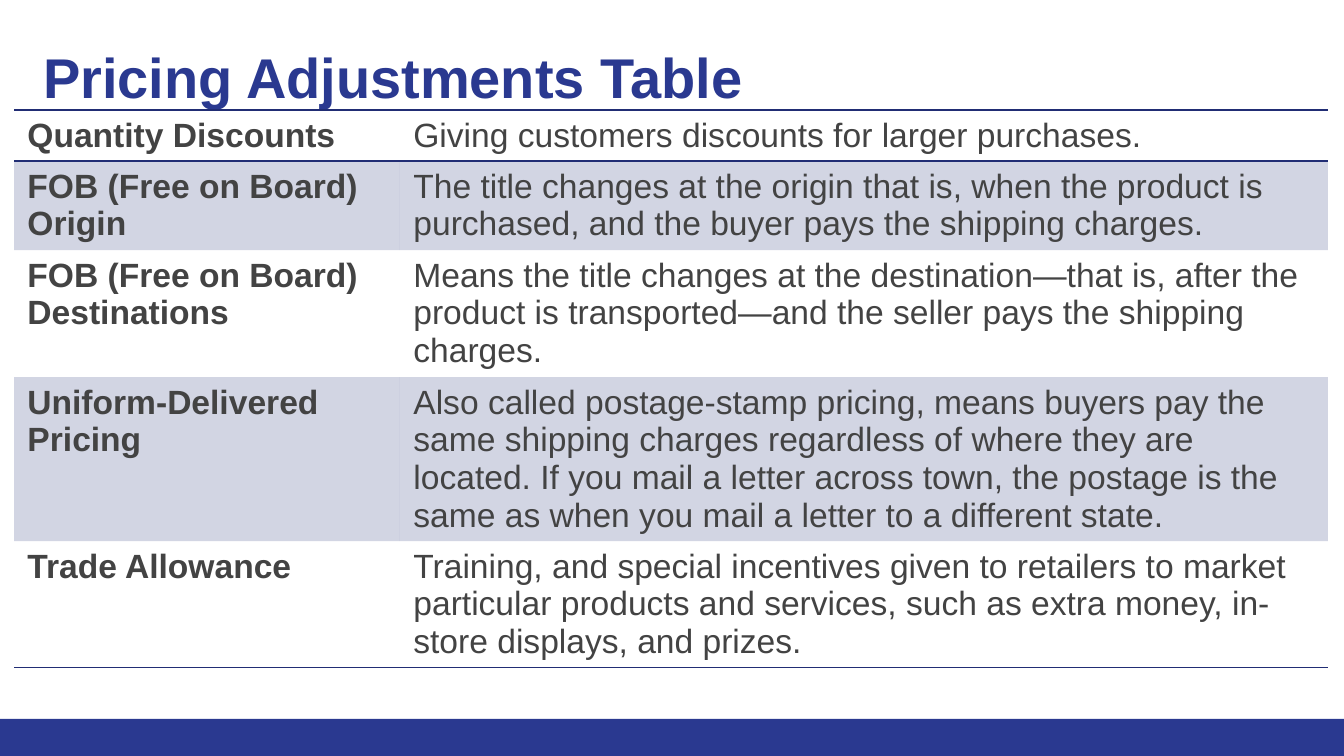
import dataclasses

import lxml.etree
import pptx
import pptx.dml.color
import pptx.enum.shapes
import pptx.enum.text
import pptx.oxml.ns
import pptx.util

EMU_PER_PX = 9144000 / 1344


@dataclasses.dataclass(frozen=True)
class Theme:
    font: str = "Arial"
    brand: str = "2A3990"
    rule: str = "212D74"
    text: str = "434343"
    title_size: int = 30
    body_size: int = 18
    rule_width: int = 1
    band_opacity: int = 20


@dataclasses.dataclass(frozen=True)
class Adjustment:
    name: str
    meaning: str
    height: int
    banded: bool = False
    rules: str = ""  # ruled sides: T for top, B for bottom


THEME = Theme()
COLUMN_WIDTHS = (386, 928)
ADJUSTMENTS = (
    Adjustment("Quantity Discounts", "Giving customers discounts for larger purchases.", 51, rules="TB"),
    Adjustment(
        "FOB (Free on Board) Origin",
        "The title changes at the origin that is, when the product is purchased, "
        "and the buyer pays the shipping charges.",
        89, banded=True, rules="T"),
    Adjustment(
        "FOB (Free on Board) Destinations",
        "Means the title changes at the destination—that is, after the product is "
        "transported—and the seller pays the shipping charges.",
        127),
    Adjustment(
        "Uniform-Delivered Pricing",
        "Also called postage-stamp pricing, means buyers pay the same shipping charges "
        "regardless of where they are located. If you mail a letter across town, the "
        "postage is the same as when you mail a letter to a different state.",
        164, banded=True),
    Adjustment(
        "Trade Allowance",
        "Training, and special incentives given to retailers to market particular products "
        "and services, such as extra money, in-store displays, and prizes.",
        126, rules="B"),
)


def px(length: int) -> pptx.util.Emu:
    return pptx.util.Emu(round(length * EMU_PER_PX))


def rgb(color: str) -> pptx.dml.color.RGBColor:
    return pptx.dml.color.RGBColor.from_string(color)


def write_text(text_frame, text: str, size: int, color: str, bold: bool) -> None:
    text_frame.text = text
    paragraph = text_frame.paragraphs[0]
    paragraph.alignment = pptx.enum.text.PP_ALIGN.LEFT
    font = paragraph.runs[0].font
    font.name, font.size, font.bold = THEME.font, pptx.util.Pt(size), bold
    font.color.rgb = rgb(color)


def add_element(parent, tag: str, **attributes: str):
    return lxml.etree.SubElement(parent, pptx.oxml.ns.qn(tag), **attributes)


def set_borders(cell, ruled_sides: str) -> None:
    properties = cell._tc.get_or_add_tcPr()
    for side in "LRTB":
        if side in ruled_sides:
            width = str(pptx.util.Pt(THEME.rule_width))
            line = add_element(properties, f"a:ln{side}", w=width)
            add_element(add_element(line, "a:solidFill"), "a:srgbClr", val=THEME.rule)
        else:
            add_element(add_element(properties, f"a:ln{side}", w="0"), "a:noFill")


def set_fill(cell, banded: bool) -> None:
    if not banded:
        cell.fill.background()
        return
    cell.fill.solid()
    cell.fill.fore_color.rgb = rgb(THEME.rule)
    color = cell._tc.tcPr.find("a:solidFill/a:srgbClr", pptx.oxml.ns._nsmap)
    add_element(color, "a:alpha", val=str(THEME.band_opacity * 1000))


def add_footer_bar(slide) -> None:
    bar = slide.shapes.add_shape(
        pptx.enum.shapes.MSO_SHAPE.RECTANGLE, px(0), px(719), px(1344), px(37))
    bar.shadow.inherit = False
    bar.fill.solid()
    bar.fill.fore_color.rgb = rgb(THEME.brand)
    bar.line.fill.background()


def format_title(slide, text: str) -> None:
    title = slide.shapes.title
    title.left, title.top, title.width, title.height = px(30), px(24), px(1265), px(121)
    text_frame = title.text_frame
    text_frame.auto_size = pptx.enum.text.MSO_AUTO_SIZE.NONE
    text_frame.vertical_anchor = pptx.enum.text.MSO_ANCHOR.TOP
    text_frame.margin_left = text_frame.margin_right = px(13)
    text_frame.margin_top = px(19)
    write_text(text_frame, text, THEME.title_size, THEME.brand, True)


def add_adjustments_table(slide) -> None:
    height = sum(adjustment.height for adjustment in ADJUSTMENTS)
    table = slide.shapes.add_table(
        len(ADJUSTMENTS), len(COLUMN_WIDTHS),
        px(14), px(110), px(sum(COLUMN_WIDTHS)), px(height)).table
    table.first_row = table.horz_banding = False
    for column, width in zip(table.columns, COLUMN_WIDTHS):
        column.width = px(width)
    for row, adjustment in zip(table.rows, ADJUSTMENTS):
        row.height = px(adjustment.height)
        for cell, text, bold in zip(
                row.cells, (adjustment.name, adjustment.meaning), (True, False)):
            write_text(cell.text_frame, text, THEME.body_size, THEME.text, bold)
            set_borders(cell, adjustment.rules)
            set_fill(cell, adjustment.banded)


def main() -> None:
    presentation = pptx.Presentation()
    presentation.slide_width, presentation.slide_height = px(1344), px(756)
    title_only = presentation.slide_layouts.get_by_name("Title Only")
    slide = presentation.slides.add_slide(title_only)

    # Footer band, heading and table
    add_footer_bar(slide)
    format_title(slide, "Pricing Adjustments Table")
    add_adjustments_table(slide)

    presentation.save("out.pptx")


if __name__ == "__main__":
    main()
